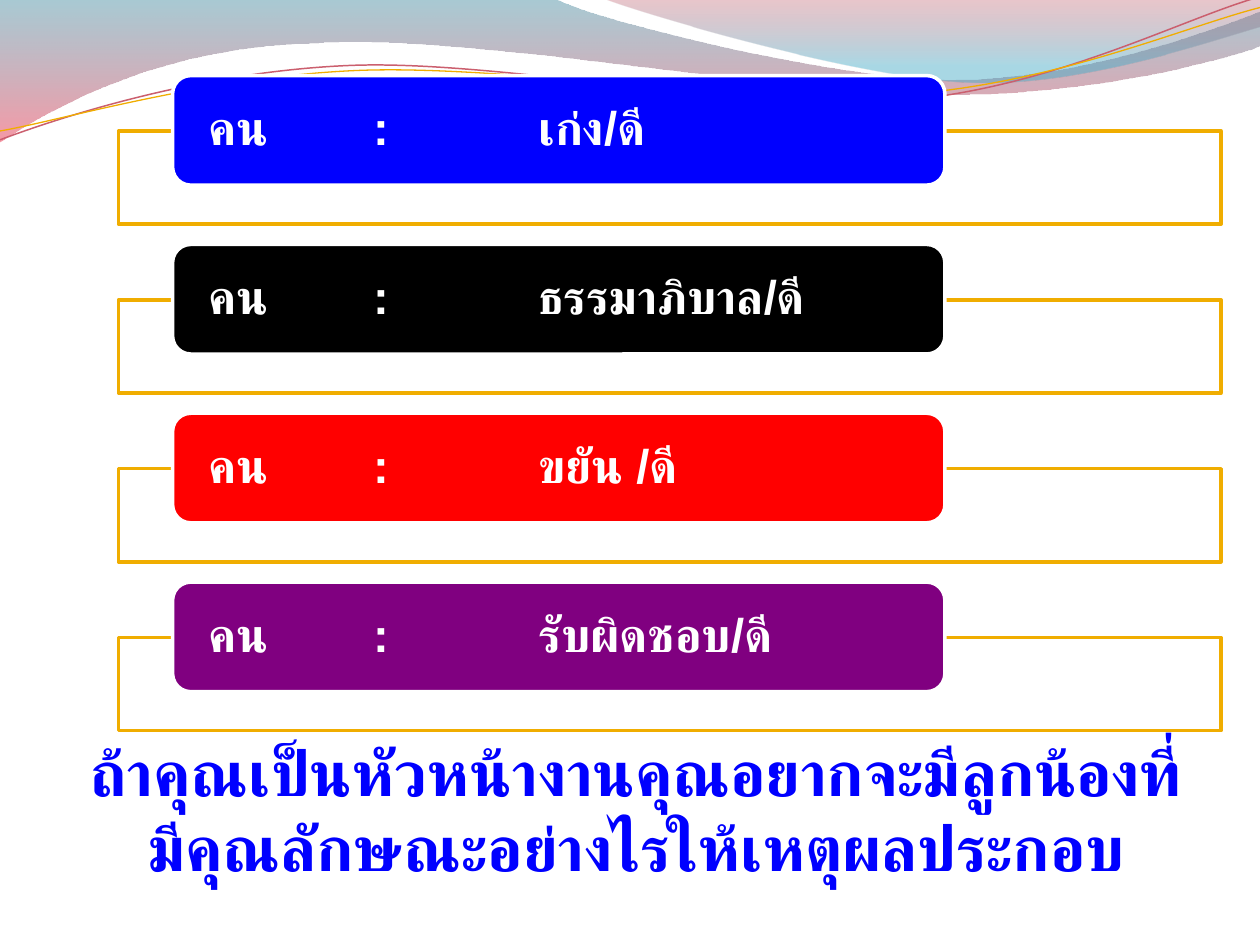
from dataclasses import dataclass
from math import cos, radians, sin

from lxml.etree import Element, SubElement
from pptx import Presentation
from pptx.dml.color import RGBColor
from pptx.enum.shapes import MSO_SHAPE as Preset
from pptx.enum.text import MSO_ANCHOR as Anchor, PP_ALIGN as Align
from pptx.oxml.ns import qn
from pptx.util import Inches, Pt

COLORS = {
    "white": "FFFFFF", "black": "000000", "blue": "0000FF", "red": "FF0000",
    "purple": "800080", "gold": "F0AD00", "rose": "CB5F6E", "teal": "3F8A9F",
    "coral": "EF445B", "crimson": "B84253", "aqua": "42ABC7",
}
FONT = "Arial"
TILT = 2.7
ROW_TOP, ROW_PITCH = 0.6, 1.34
FRAME_OFFSET = 0.44
TAB_GAP = 1.31


@dataclass
class Stop:
    color: str
    position: float
    alpha: int


@dataclass
class Wave:
    start: tuple
    segments: list
    stops: tuple = ()
    line: str = ""
    width: float = 0
    pivot: tuple = ()


@dataclass
class Row:
    quality: str
    color: str


WAVES = [
    Wave((0, 0), [
        [(4.4, -0.01)],
        [(4.76, 0.17), (6.64, 0.63), (7.58, 0.63)],
        [(8.53, 0.63), (9.58, 0.26), (10, 0.09)],
        [(10.01, 0.36)],
        [(9.83, 0.44), (8.7, 0.76), (7.46, 0.75)],
        [(6.22, 0.75), (3.82, 0.28), (2.57, 0.34)],
        [(1.29, 0.36), (0.46, 0.83), (-0.01, 1.13)],
    ], stops=(Stop("teal", 0, 45), Stop("coral", 1, 55))),
    Wave((4.79, -0.01), [
        [(5.09, 0.11), (6.82, 0.62), (7.69, 0.65)],
        [(8.56, 0.69), (9.61, 0.32), (10, 0.21)],
        [(10, 0)],
    ], stops=(Stop("crimson", 0, 30), Stop("aqua", 0.8, 45))),
    Wave((0, 1.11), [
        [(0.48, 0.93), (1.58, 0.57), (2.77, 0.52)],
        [(3.95, 0.47), (5.93, 0.89), (7.13, 0.8)],
        [(8.33, 0.71), (9.38, 0.15), (9.98, -0.02)],
    ], line="rose", width=0.85, pivot=(4.99, 0.57)),
    Wave((0, 1.04), [
        [(0.47, 0.96), (1.64, 0.61), (2.83, 0.56)],
        [(4.03, 0.51), (5.97, 0.84), (7.17, 0.75)],
        [(8.36, 0.67), (9.41, 0.21), (10, 0.06)],
    ], line="gold", width=0.75, pivot=(5, 0.59)),
]
ROWS = [
    Row("เก่ง/ดี", "blue"),
    Row("ธรรมาภิบาล/ดี", "black"),
    Row("ขยัน /ดี", "red"),
    Row("รับผิดชอบ/ดี", "purple"),
]
QUESTION = "ถ้าคุณเป็นหัวหน้างานคุณอยากจะมีลูกน้องที่มีคุณลักษณะอย่างไรให้เหตุผลประกอบ"


def rgb(name: str) -> RGBColor:
    """Return the named colour."""
    return RGBColor.from_string(COLORS[name])


def set_alpha(parent, percent: int) -> None:
    """Set the opacity of the colour held below an XML element."""
    color = next(parent.iter(qn("a:srgbClr")))
    SubElement(color, qn("a:alpha")).set("val", str(percent * 1000))


def place(point: tuple, pivot: tuple) -> tuple:
    """Return a point in slide units, levelled about the pivot if there is one."""
    x, y = point
    if pivot:
        angle = radians(TILT)
        dx, dy = x - pivot[0], y - pivot[1]
        x = pivot[0] + dx * cos(angle) - dy * sin(angle)
        y = pivot[1] + dx * sin(angle) + dy * cos(angle)
    return Inches(x), Inches(y)


def bend(shape, segments: list) -> None:
    """Turn the straight segments that have control points into cubic curves."""
    lines = list(shape.element.spPr.iter(qn("a:lnTo")))
    for line, segment in zip(lines, segments):
        if len(segment) == 1:
            continue
        curve = Element(qn("a:cubicBezTo"))
        for x, y in segment:
            point = SubElement(curve, qn("a:pt"))
            point.set("x", str(x - shape.left))
            point.set("y", str(y - shape.top))
        line.getparent().replace(line, curve)


def add_wave(page, wave: Wave) -> None:
    """Draw a gradient band or a thin curved line."""
    segments = [[place(point, wave.pivot) for point in segment] for segment in wave.segments]
    builder = page.shapes.build_freeform(*place(wave.start, wave.pivot))
    builder.add_line_segments([segment[-1] for segment in segments], close=bool(wave.stops))
    shape = builder.convert_to_shape()
    bend(shape, segments)
    shape.shadow.inherit = False
    if wave.pivot:
        shape.rotation = 360 - TILT
        shape.fill.background()
        shape.line.color.rgb = rgb(wave.line)
        shape.line.width = Pt(wave.width)
        return
    shape.line.fill.background()
    shape.fill.gradient()
    shape.fill.gradient_angle = 270
    for target, stop in zip(shape.fill.gradient_stops, wave.stops):
        target.color.rgb = rgb(stop.color)
        target.position = stop.position
    for element, stop in zip(shape.element.spPr.iter(qn("a:gs")), wave.stops):
        set_alpha(element, stop.alpha)


def add_box(page, preset, left: float, top: float, width: float, height: float,
            fill: str, line: str):
    """Draw a filled and outlined preset shape."""
    box = page.shapes.add_shape(preset, Inches(left), Inches(top), Inches(width), Inches(height))
    box.shadow.inherit = False
    box.fill.solid()
    box.fill.fore_color.rgb = rgb(fill)
    box.line.color.rgb = rgb(line)
    box.line.width = Pt(2)
    return box


def add_span(para, text: str, size: float, color: str) -> None:
    """Add a bold run with its Latin and Thai typeface."""
    span = para.add_run()
    span.text = text
    span.font.size = Pt(size)
    span.font.bold = True
    span.font.name = FONT
    span.font.color.rgb = rgb(color)
    SubElement(span.font._element, qn("a:cs")).set("typeface", FONT)


def add_row(page, row: Row, top: float) -> None:
    """Draw a frame with its coloured label."""
    frame = add_box(page, Preset.RECTANGLE, 0.94, top + FRAME_OFFSET, 8.75, 0.74, "white", "gold")
    set_alpha(frame.element.spPr, 90)
    label = add_box(page, Preset.ROUNDED_RECTANGLE, 1.37, top, 6.13, 0.87, row.color, "white")
    body = label.text_frame
    body.word_wrap = True
    body.vertical_anchor = Anchor.MIDDLE
    body.margin_left = body.margin_right = Inches(0.24)
    body.margin_top = body.margin_bottom = 0
    para = body.paragraphs[0]
    para.alignment = Align.LEFT
    para.line_spacing = 0.9
    tabs = SubElement(para._p.get_or_add_pPr(), qn("a:tabLst"))
    for index in (1, 2):
        tab = SubElement(tabs, qn("a:tab"))
        tab.set("pos", str(Inches(TAB_GAP * index)))
        tab.set("algn", "l")
    add_span(para, f"คน\t:\t{row.quality}", 27, "white")


def add_question(page) -> None:
    """Write the centred question below the rows."""
    box = page.shapes.add_textbox(Inches(0.55), Inches(1.17), Inches(9), Inches(6.17))
    box.text_frame.word_wrap = True
    box.text_frame.margin_top = Inches(4.65)
    para = box.text_frame.paragraphs[0]
    para.alignment = Align.CENTER
    add_span(para, QUESTION, 36, "blue")


def main() -> None:
    """Build the slide and save it."""
    deck = Presentation()
    deck.slide_width, deck.slide_height = Inches(10), Inches(7.5)
    page = deck.slides.add_slide(deck.slide_layouts[6])
    for wave in WAVES:
        add_wave(page, wave)
    add_question(page)
    for index, row in enumerate(ROWS):
        add_row(page, row, ROW_TOP + index * ROW_PITCH)
    deck.save("out.pptx")


if __name__ == "__main__":
    main()
